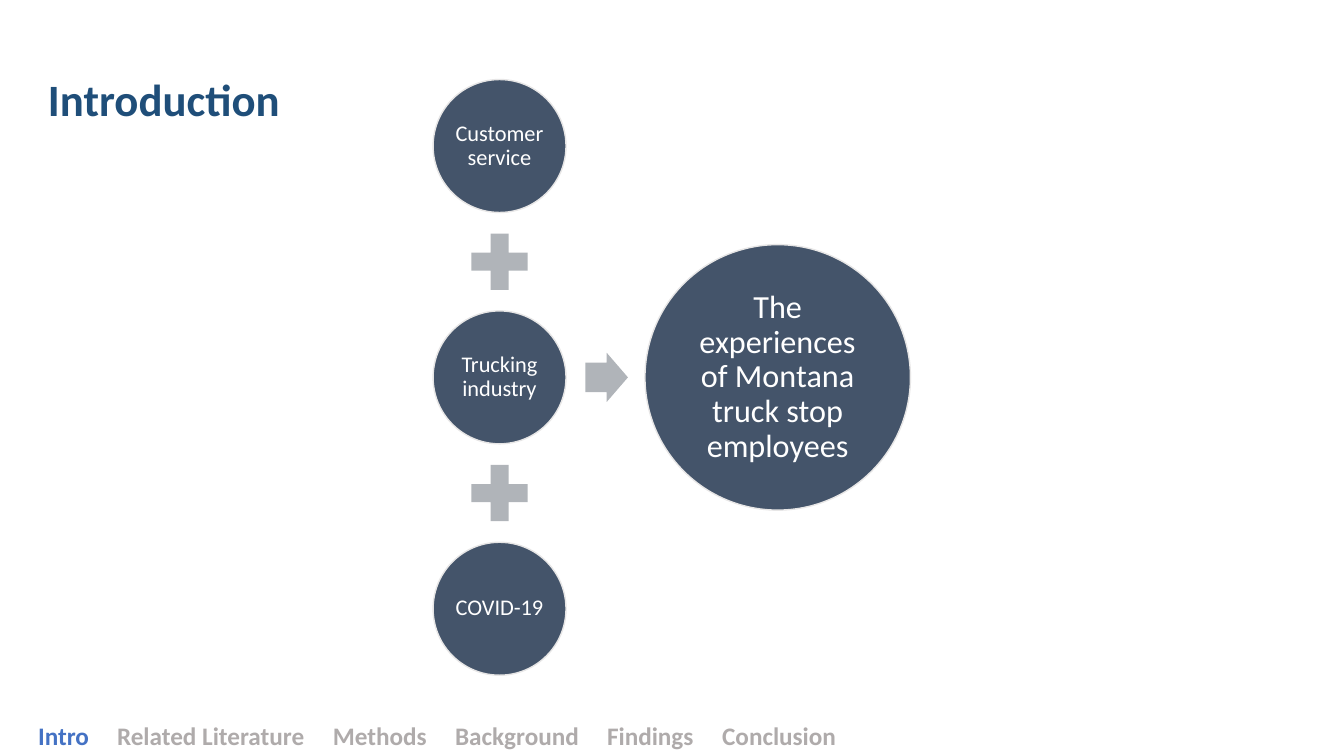
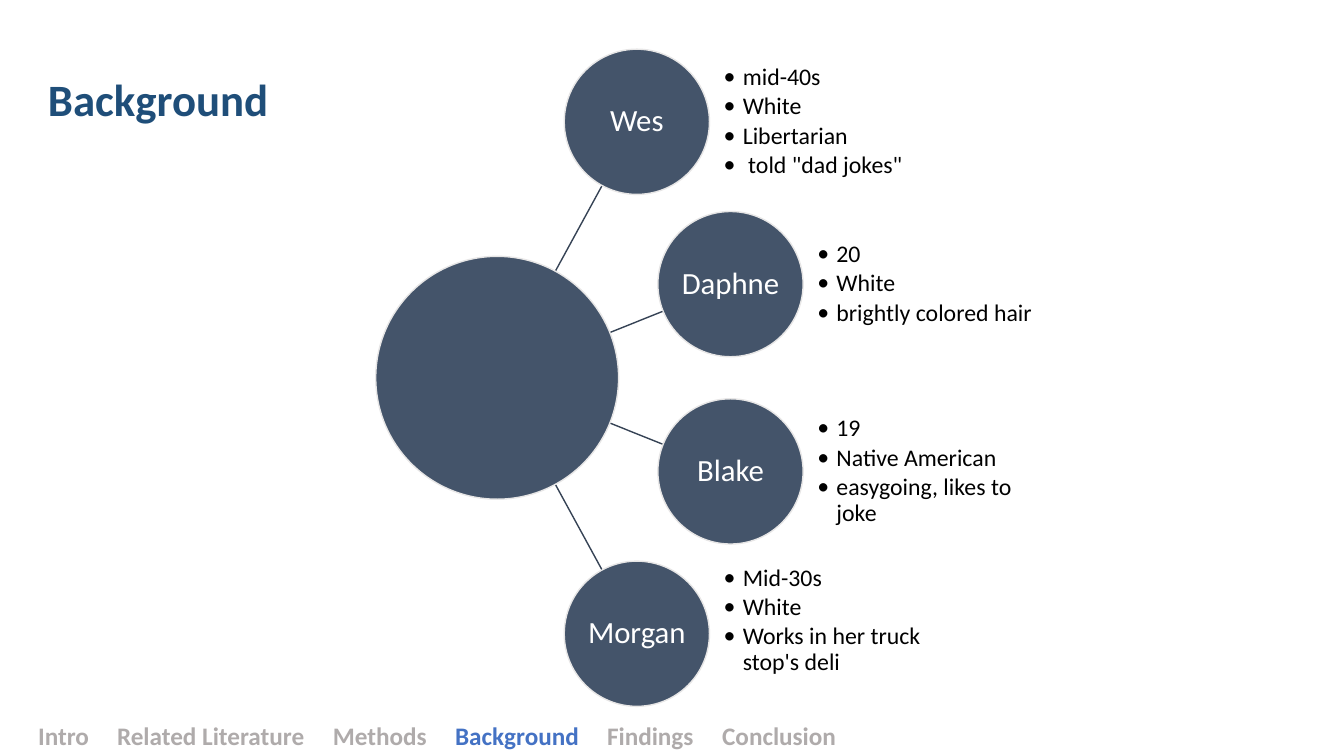
from math import hypot
from lxml.etree import SubElement as Sub
from pptx import Presentation as Deck
from pptx.dml.color import RGBColor as RGB
from pptx.enum.shapes import MSO_CONNECTOR as LINK, MSO_SHAPE as KIND
from pptx.enum.text import MSO_ANCHOR as ANCHOR, PP_ALIGN as ALIGN
from pptx.oxml.ns import qn
from pptx.util import Cm, Pt

# Shared look
FONT = "Calibri"
HUES = {
    "title": "1F4E79", "now": "4472C4", "rest": "AFABAB",
    "disc": "44546A", "rim": "E7E6E6", "sign": "B0B4B9",
    "link": "364355", "light": "FFFFFF", "dark": "000000",
}
WIDE, HIGH = 33.87, 19.05
MID = 9.52
# Footer sections and their tab stops
PARTS = {
    "Intro": 0, "Related Literature": 1.99, "Methods": 7.43,
    "Background": 10.51, "Findings": 14.34, "Conclusion": 17.24,
}


def hue(name):
    return RGB.from_string(HUES[name])


def style(item, size, color, bold=False):
    """Set the font of a paragraph or a run."""
    font = item.font
    font.name, font.size, font.bold = FONT, Pt(size), bold
    font.color.rgb = hue(color)


def inset(frame, gap):
    frame.margin_left = frame.margin_right = Cm(gap)
    frame.margin_top = frame.margin_bottom = Cm(gap)


def text_box(slide, x, y, w, h):
    frame = slide.shapes.add_textbox(Cm(x), Cm(y), Cm(w), Cm(h)).text_frame
    frame.word_wrap = True
    inset(frame, 0)
    return frame


def title(slide, text):
    par = text_box(slide, 1.21, 1.8, 9.4, 1.4).paragraphs[0]
    par.text = text
    style(par, 32, "title", True)


def footer(slide, now):
    par = text_box(slide, 0.96, 18.16, 22, 0.8).paragraphs[0]
    tabs = Sub(par._p.get_or_add_pPr(), qn("a:tabLst"))
    for i, (name, stop) in enumerate(PARTS.items()):
        if i:
            Sub(tabs, qn("a:tab"), pos=str(Cm(stop)), algn="l")
        run = par.add_run()
        run.text = "\t" + name if i else name
        style(run, 18, "now" if name == now else "rest", True)


def shape(slide, kind, x, y, w, h, fill):
    """Add a flat shape centred on x, y."""
    item = slide.shapes.add_shape(
        kind, Cm(x - w / 2), Cm(y - h / 2), Cm(w), Cm(h))
    item.shadow.inherit = False
    item.fill.solid()
    item.fill.fore_color.rgb = hue(fill)
    item.line.fill.background()
    return item


def disc(slide, x, y, size, text="", points=16):
    item = shape(slide, KIND.OVAL, x, y, size, size, "disc")
    item.line.color.rgb = hue("rim")
    item.line.width = Pt(1)
    if text:
        frame = item.text_frame
        frame.word_wrap = True
        frame.vertical_anchor = ANCHOR.MIDDLE
        inset(frame, 0.05)
        par = frame.paragraphs[0]
        par.text = text
        par.alignment = ALIGN.CENTER
        par.line_spacing = 0.9
        style(par, points, "light")


def link(slide, x1, y1, x2, y2, near, far):
    """Join two centres, leaving out near and far at the ends."""
    span = hypot(x2 - x1, y2 - y1)
    dx, dy = (x2 - x1) / span, (y2 - y1) / span
    line = slide.shapes.add_connector(
        LINK.STRAIGHT, Cm(x1 + near * dx), Cm(y1 + near * dy),
        Cm(x2 - far * dx), Cm(y2 - far * dy))
    line.line.color.rgb = hue("link")
    line.line.width = Pt(1)
    Sub(line._element.spPr, qn("a:effectLst"))


def bullets(slide, x, y, w, h, items):
    frame = text_box(slide, x, y, w, h)
    frame.vertical_anchor = ANCHOR.MIDDLE
    for i, text in enumerate(items):
        par = frame.add_paragraph() if i else frame.paragraphs[0]
        par.text = text
        par.line_spacing = 0.9
        par.space_after = Pt(2.55)
        props = par._p.get_or_add_pPr()
        props.set("marL", str(Cm(0.48)))
        props.set("indent", str(-Cm(0.48)))
        Sub(props, qn("a:buFont"), typeface=FONT)
        Sub(props, qn("a:buChar"), char="•")
        style(par, 17, "dark")


def page(deck, head, part):
    slide = deck.slides.add_slide(deck.slide_layouts[6])
    title(slide, head)
    footer(slide, part)
    return slide


def intro(deck):
    slide = page(deck, "Introduction", "Intro")
    x, mid, step = 12.59, MID - 0.01, 5.83
    # Column of topics joined by plus signs
    for i, text in enumerate(
            ["Customer service", "Trucking industry", "COVID-19"]):
        y = mid + (i - 1) * step
        disc(slide, x, y, 3.35, text)
        if i:
            shape(slide, KIND.MATH_PLUS, x, y - step / 2, 1.93, 1.93, "sign")
    # Arrow to the outcome
    arrow = shape(slide, KIND.RIGHT_ARROW, 15.29, mid, 1.07, 1.24, "sign")
    arrow.adjustments[0], arrow.adjustments[1] = 0.6, 0.5
    disc(slide, 19.6, mid, 6.69,
         "The experiences of Montana truck stop employees", 23)


def background(deck):
    slide = page(deck, "Background", "Background")
    hub, size = 12.53, 3.66
    # Name, centre x, offset from the middle, lift of the list, traits
    people = [
        ("Wes", 16.05, -6.45, 0,
         ["mid-40s", "White", "Libertarian", " told \"dad jokes\""]),
        ("Daphne", 18.41, -2.36, 0,
         ["20", "White", "brightly colored hair"]),
        ("Blake", 18.41, 2.36, 0,
         ["19", "Native American", "easygoing, likes to joke"]),
        ("Morgan", 16.05, 6.45, 0.33,
         ["Mid-30s", "White", "Works in her truck stop's deli"]),
    ]
    # Spokes start just behind the hub
    for _, x, off, _, _ in people:
        link(slide, hub, MID, x, MID + off, 2.36, size / 2)
    disc(slide, hub, MID, 6.12)
    for name, x, off, lift, traits in people:
        y = MID + off
        disc(slide, x, y, size, name, 22)
        bullets(slide, x + 2.19, y - size / 2 - lift, 5.49, size, traits)


def main():
    deck = Deck()
    deck.slide_width, deck.slide_height = Cm(WIDE), Cm(HIGH)
    intro(deck)
    background(deck)
    deck.save("out.pptx")


if __name__ == "__main__":
    main()
